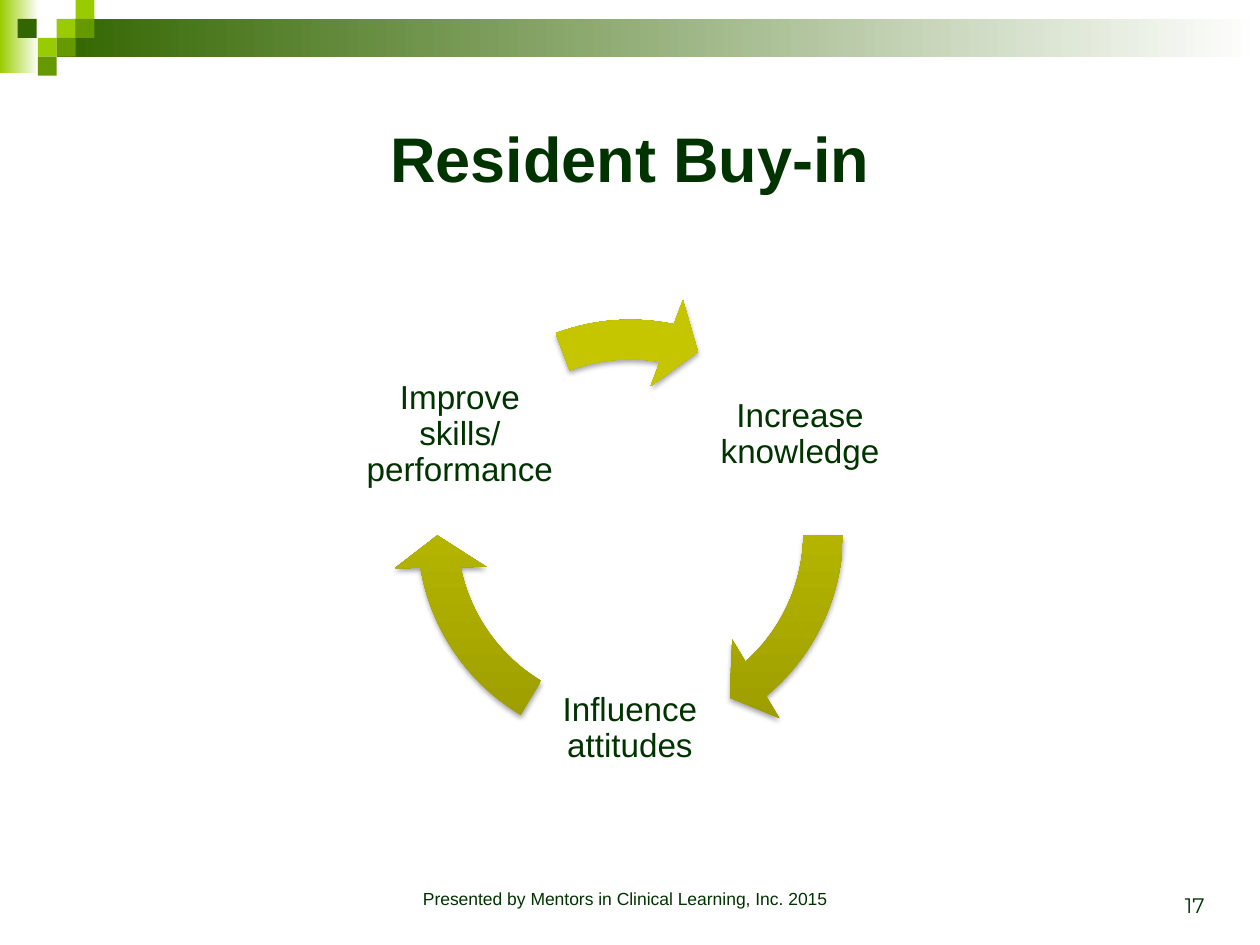
from copy import deepcopy
from dataclasses import dataclass

from lxml.etree import SubElement
from pptx import Presentation
from pptx.dml.color import RGBColor
from pptx.enum.shapes import MSO_SHAPE
from pptx.enum.text import MSO_ANCHOR, MSO_AUTO_SIZE, PP_ALIGN
from pptx.oxml.ns import qn
from pptx.util import Pt

DARK_TEXT = "003300"
LIME, LEAF, FOREST, WHITE = "99CC00", "669900", "336600", "FFFFFF"
OLIVE_STOPS = [(0, "989800"), (0.8, "C6C600"), (1, "C7C700")]
SQUARE = 10.8


@dataclass
class Frame:
    left: float
    top: float
    width: float
    height: float

    def lengths(self) -> tuple:
        return Pt(self.left), Pt(self.top), Pt(self.width), Pt(self.height)


@dataclass
class Step:
    text: str
    left: float
    top: float
    head_angle: float
    tail_angle: float


@dataclass
class Style:
    size: float
    font: str = "Arial"
    bold: bool = False
    align: PP_ALIGN = PP_ALIGN.CENTER
    anchor: MSO_ANCHOR = MSO_ANCHOR.MIDDLE


def color(value: str) -> RGBColor:
    return RGBColor.from_string(value)


def add_plain_shape(page, kind: MSO_SHAPE, frame: Frame):
    shape = page.shapes.add_shape(kind, *frame.lengths())
    shape.shadow.inherit = False
    shape.line.fill.background()
    return shape


def fill_gradient(shape, stops: list, angle: float) -> None:
    shape.fill.gradient()
    shape.fill.gradient_angle = angle
    stop_list = shape._element.spPr.find(".//" + qn("a:gsLst"))
    while len(stop_list) < len(stops):
        stop_list.append(deepcopy(stop_list[0]))
    for stop, (position, value) in zip(shape.fill.gradient_stops, stops):
        stop.position = position
        stop.color.rgb = color(value)


def add_band(page, frame: Frame, start: str) -> None:
    band = add_plain_shape(page, MSO_SHAPE.RECTANGLE, frame)
    fill_gradient(band, [(0, start), (1, WHITE)], 0)


def add_square(page, left: float, top: float, value: str) -> None:
    square = add_plain_shape(page, MSO_SHAPE.RECTANGLE, Frame(left, top, SQUARE, SQUARE))
    square.fill.solid()
    square.fill.fore_color.rgb = color(value)


def write_text(box, text: str, style: Style) -> None:
    frame = box.text_frame
    frame.word_wrap = True
    frame.auto_size = MSO_AUTO_SIZE.NONE
    frame.vertical_anchor = style.anchor
    para = frame.paragraphs[0]
    para.alignment = style.align
    span = para.add_run()
    span.text = text
    span.font.size = Pt(style.size)
    span.font.name = style.font
    span.font.bold = style.bold
    span.font.color.rgb = color(DARK_TEXT)


def add_label(page, frame: Frame, text: str, style: Style):
    box = page.shapes.add_textbox(*frame.lengths())
    write_text(box, text, style)
    return box


def add_soft_shadow(shape) -> None:
    effects = shape._element.spPr.find(qn("a:effectLst"))
    shadow = SubElement(effects, qn("a:outerShdw"), blurRad=str(Pt(3.1)),
                        dist=str(Pt(1.8)), dir="5400000", rotWithShape="0")
    shade = SubElement(shadow, qn("a:srgbClr"), val="000000")
    SubElement(shade, qn("a:alpha"), val="35000")


def add_step(page, step: Step) -> None:
    box = add_label(page, Frame(step.left, step.top, 115.2, 115.2), step.text, Style(19))
    frame = box.text_frame
    frame.margin_left = frame.margin_right = Pt(2)
    frame.margin_top = frame.margin_bottom = Pt(2)
    frame.paragraphs[0].line_spacing = 0.9

    arrow = add_plain_shape(page, MSO_SHAPE.CIRCULAR_ARROW, Frame(223.7, 167.8, 272.9, 272.9))
    # Thickness, head angle, head end, tail start, head width
    settings = (8.3 / 100, 5.76, step.head_angle, step.tail_angle, 9.6 / 100)
    for index, value in enumerate(settings):
        arrow.adjustments[index] = value
    fill_gradient(arrow, OLIVE_STOPS, 90)
    add_soft_shadow(arrow)


def main() -> None:
    deck = Presentation()
    deck.slide_width, deck.slide_height = Pt(720), Pt(540)
    page = deck.slides.add_slide(deck.slide_layouts[5])

    # Header bands and checker squares
    add_band(page, Frame(0, 0, 22.3, 41.8), LIME)
    add_band(page, Frame(32.4, SQUARE, 687.6, 21.6), FOREST)
    add_square(page, 10.1, SQUARE, FOREST)
    checkers = [(3, 1, LIME), (4, 0, LIME), (4, 1, LEAF),
                (2, 2, LIME), (3, 2, LEAF), (2, 3, LEAF)]
    for column, row, value in checkers:
        add_square(page, column * SQUARE, row * SQUARE, value)

    # Title
    title = page.shapes.title
    title.left, title.top, title.width, title.height = Frame(36, 36, 648, 108).lengths()
    write_text(title, "Resident Buy-in", Style(36, bold=True))

    # Cycle of steps, each followed by its arrow
    steps = [
        Step("Increase knowledge", 399.6, 190.8, 29.63, 0.52),
        Step("Influence attitudes", 302.4, 358.6, 101.71, 72.61),
        Step("Improve skills/ performance", 205.2, 190.8, 168.56, 149.68),
    ]
    for step in steps:
        add_step(page, step)

    # Footer and page number
    add_label(page, Frame(198, 504, 318.2, 23.8),
              "Presented by Mentors in Clinical Learning, Inc. 2015",
              Style(10, anchor=MSO_ANCHOR.TOP))
    add_label(page, Frame(527.8, 491.8, 167.8, 36), "17",
              Style(12, "Montserrat", align=PP_ALIGN.RIGHT, anchor=MSO_ANCHOR.BOTTOM))

    deck.save("out.pptx")


if __name__ == "__main__":
    main()
